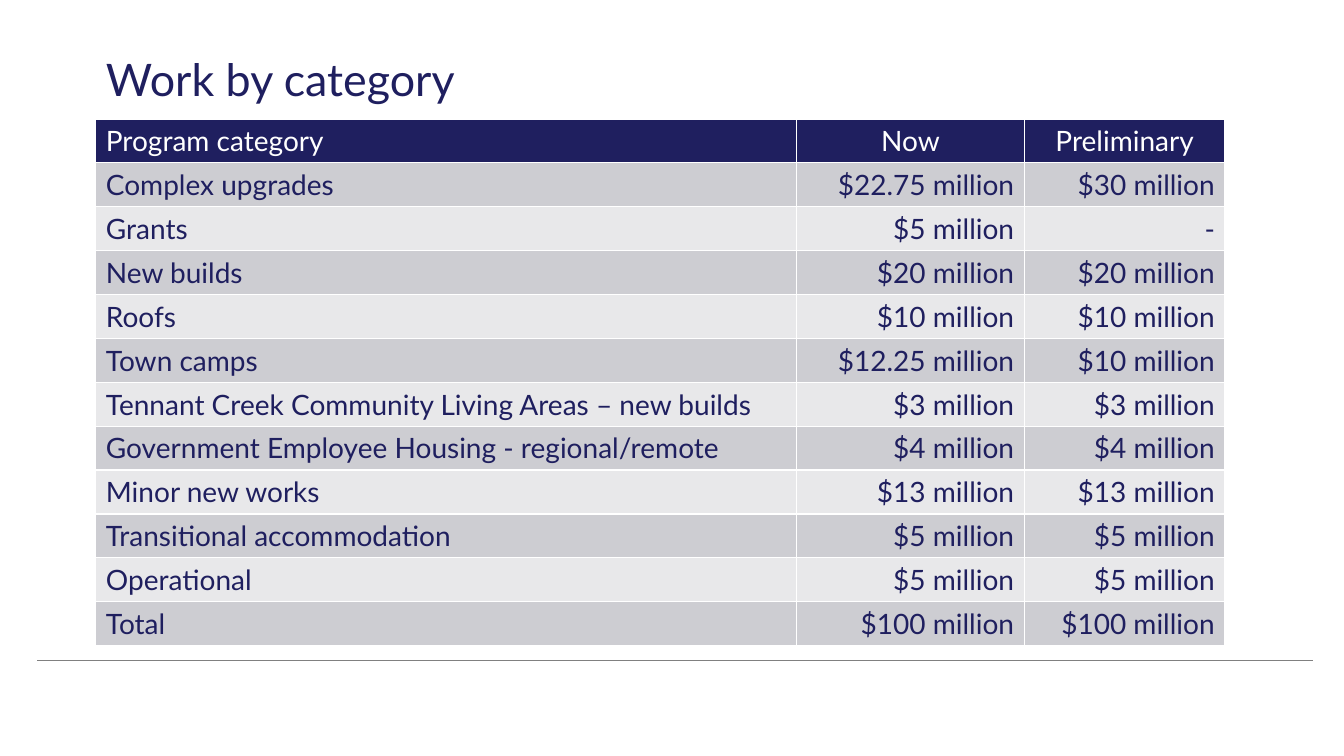
"""Build the slide that lists program funding by work category."""
from pptx import Presentation
from pptx.dml.color import RGBColor
from pptx.enum.shapes import MSO_CONNECTOR
from pptx.enum.text import MSO_ANCHOR, PP_ALIGN
from pptx.oxml.ns import qn
from pptx.util import Inches, Pt
from lxml import etree

LEFT, CENTER, RIGHT = PP_ALIGN.LEFT, PP_ALIGN.CENTER, PP_ALIGN.RIGHT
TOP = MSO_ANCHOR.TOP
STRAIGHT = MSO_CONNECTOR.STRAIGHT
NAVY, WHITE, GRAY = "1F1F5F", "FFFFFF", "808080"
BANDS = ["E8E8EA", "CDCDD2"]
COLUMN_WIDTHS = [6.95, 2.26, 1.99]
ROW_HEIGHT = 0.43
ROWS = [
    ("Program category", "Now", "Preliminary"),
    ("Complex upgrades", "$22.75 million", "$30 million"),
    ("Grants", "$5 million", "-"),
    ("New builds", "$20 million", "$20 million"),
    ("Roofs", "$10 million", "$10 million"),
    ("Town camps", "$12.25 million", "$10 million"),
    ("Tennant Creek Community Living Areas – new builds", "$3 million", "$3 million"),
    ("Government Employee Housing - regional/remote", "$4 million", "$4 million"),
    ("Minor new works", "$13 million", "$13 million"),
    ("Transitional accommodation", "$5 million", "$5 million"),
    ("Operational", "$5 million", "$5 million"),
    ("Total", "$100 million", "$100 million"),
]


def color(value):
    return RGBColor.from_string(value)


def format_font(font, size, value):
    for name, setting in {"name": "Lato", "size": Pt(size), "bold": False}.items():
        setattr(font, name, setting)
    font.color.rgb = color(value)


deck = Presentation()
deck.slide_width, deck.slide_height = Inches(13.33), Inches(7.5)
page = deck.slides.add_slide(deck.slide_layouts[5])

title = page.shapes.title
title_place = {"left": 0.95, "top": 0.39, "width": 11.49, "height": 0.79}
for name, length in title_place.items():
    setattr(title, name, Inches(length))
title.text_frame.text = "Work by category"
title.text_frame.vertical_anchor = TOP
title.text_frame.word_wrap = True
para = title.text_frame.paragraphs[0]
title_format = {"alignment": LEFT, "line_spacing": Pt(43.9), "space_after": Pt(14.6)}
for name, setting in title_format.items():
    setattr(para, name, setting)
format_font(para.runs[0].font, 32, NAVY)

rule = page.shapes.add_connector(
    STRAIGHT, Inches(0.37), Inches(6.55), Inches(13.02), Inches(6.55))
rule.line.color.rgb = color(GRAY)
rule.line.width = Pt(1)
etree.SubElement(rule._element.spPr, qn("a:effectLst"))

table = page.shapes.add_table(
    len(ROWS), len(COLUMN_WIDTHS), Inches(0.95), Inches(1.18),
    Inches(sum(COLUMN_WIDTHS)), Inches(ROW_HEIGHT * len(ROWS))).table
for column, width in zip(table.columns, COLUMN_WIDTHS):
    column.width = Inches(width)

for row_index, texts in enumerate(ROWS):
    is_header = row_index == 0
    table.rows[row_index].height = Inches(ROW_HEIGHT)
    for column_index, text in enumerate(texts):
        cell = table.cell(row_index, column_index)
        cell.fill.solid()
        cell.fill.fore_color.rgb = color(NAVY if is_header else BANDS[row_index % 2])
        cell.text = text
        para = cell.text_frame.paragraphs[0]
        if column_index == 0:
            para.alignment = LEFT
        else:
            para.alignment = CENTER if is_header else RIGHT
        format_font(para.runs[0].font, 20, WHITE if is_header else NAVY)

deck.save("out.pptx")
